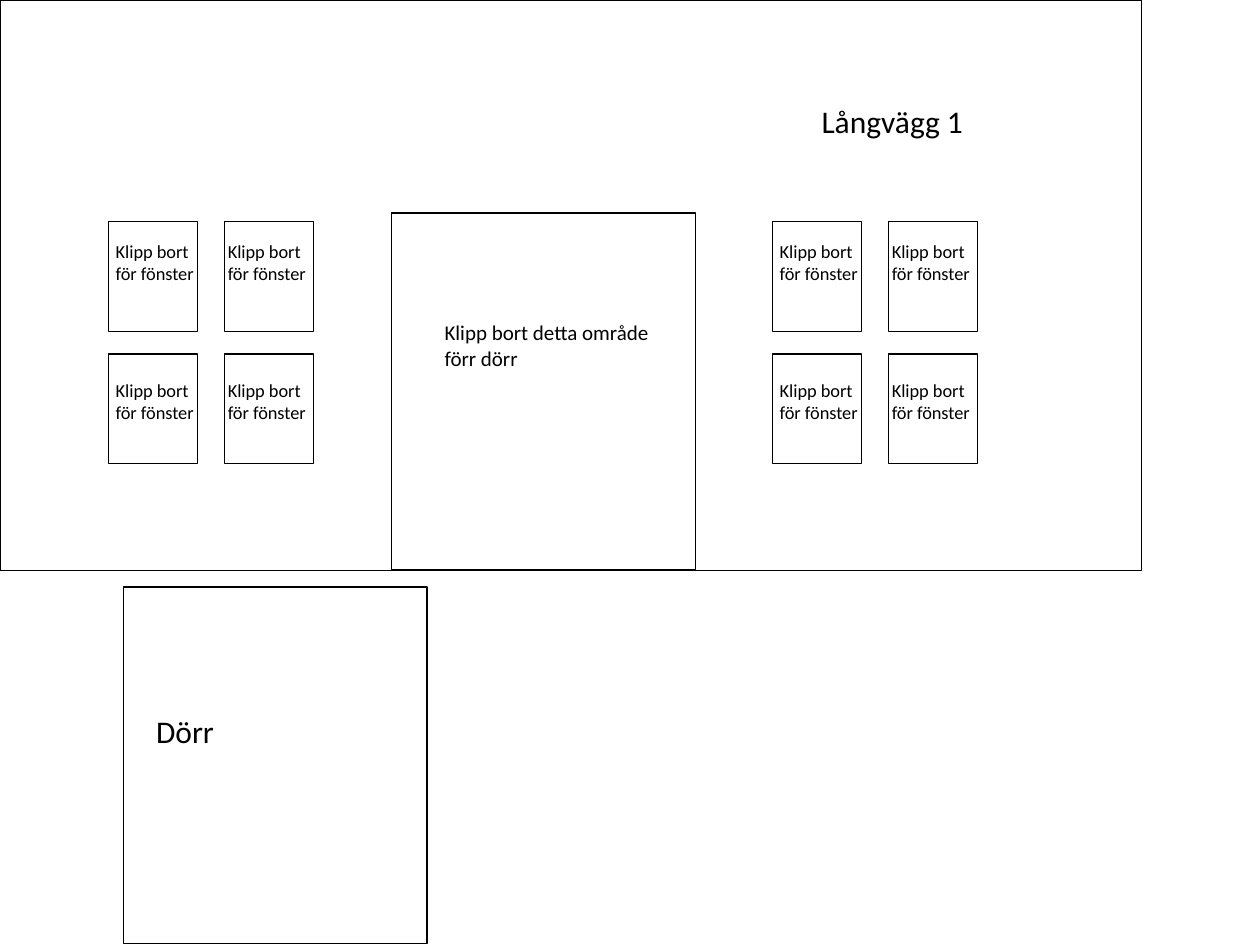
from itertools import product

from pptx import Presentation
from pptx.dml.color import RGBColor
from pptx.enum import shapes, text
from pptx.util import Inches, Pt

COLORS = {"ink": "000000"}
INK = RGBColor.from_string(COLORS["ink"])


def add_outline(parent, left, top, width, height):
    outline = parent.add_shape(shapes.MSO_SHAPE.RECTANGLE, Inches(left), Inches(top),
                               Inches(width), Inches(height))
    outline.shadow.inherit = False
    outline.fill.background()
    outline.line.color.rgb = INK
    outline.line.width = Pt(0.75)


def write_label(label, wording, size):
    frame = label.text_frame
    frame.text = wording
    frame.word_wrap = True
    frame.auto_size = text.MSO_AUTO_SIZE.SHAPE_TO_FIT_TEXT
    frame.vertical_anchor = text.MSO_ANCHOR.TOP
    frame.paragraphs[0].alignment = text.PP_ALIGN.LEFT
    font = frame.paragraphs[0].runs[0].font
    font.name = "Calibri"
    font.size = Pt(size)
    font.color.rgb = INK


prs = Presentation()
prs.slide_width = Inches(10)
prs.slide_height = Inches(7.5)
slide = prs.slides.add_slide(prs.slide_layouts[5])

wall_title = slide.shapes.title
wall_title.left, wall_title.top = Inches(6.42), Inches(0.76)
wall_title.width, wall_title.height = Inches(1.89), Inches(0.4)
write_label(wall_title, "Långvägg 1", 18)

add_outline(slide.shapes, 0, 0, 9.06, 4.53)

DOOR_SIZE = (2.41, 2.83)
doors = [
    (3.11, 1.69, 3.43, 2.49, 0.5, "Klipp bort detta område förr dörr", 12),
    (0.98, 4.66, 1.14, 5.6, 0.4, "Dörr", 18),
]
for left, top, label_left, label_top, label_height, wording, size in doors:
    add_outline(slide.shapes, left, top, *DOOR_SIZE)
    door_label = slide.shapes.add_textbox(Inches(label_left), Inches(label_top),
                                          Inches(1.89), Inches(label_height))
    write_label(door_label, wording, size)

WINDOW_LEFTS = (0.86, 6.13)
PANE_SIZE = (0.71, 0.87)
PANE_STEP = (0.92, 1.05)
for window_left in WINDOW_LEFTS:
    window = slide.shapes.add_group_shape()
    for row, column in product(range(2), repeat=2):
        add_outline(window.shapes, window_left + column * PANE_STEP[0],
                    1.76 + row * PANE_STEP[1], *PANE_SIZE)

for window_left, row, column in product(WINDOW_LEFTS, range(2), range(2)):
    pane_label = slide.shapes.add_textbox(Inches(window_left - 0.04 + column * 0.89),
                                          Inches(1.86 + row * 1.1),
                                          Inches(0.94), Inches(0.47))
    write_label(pane_label, "Klipp bort för fönster", 10.5)

prs.save("out.pptx")
